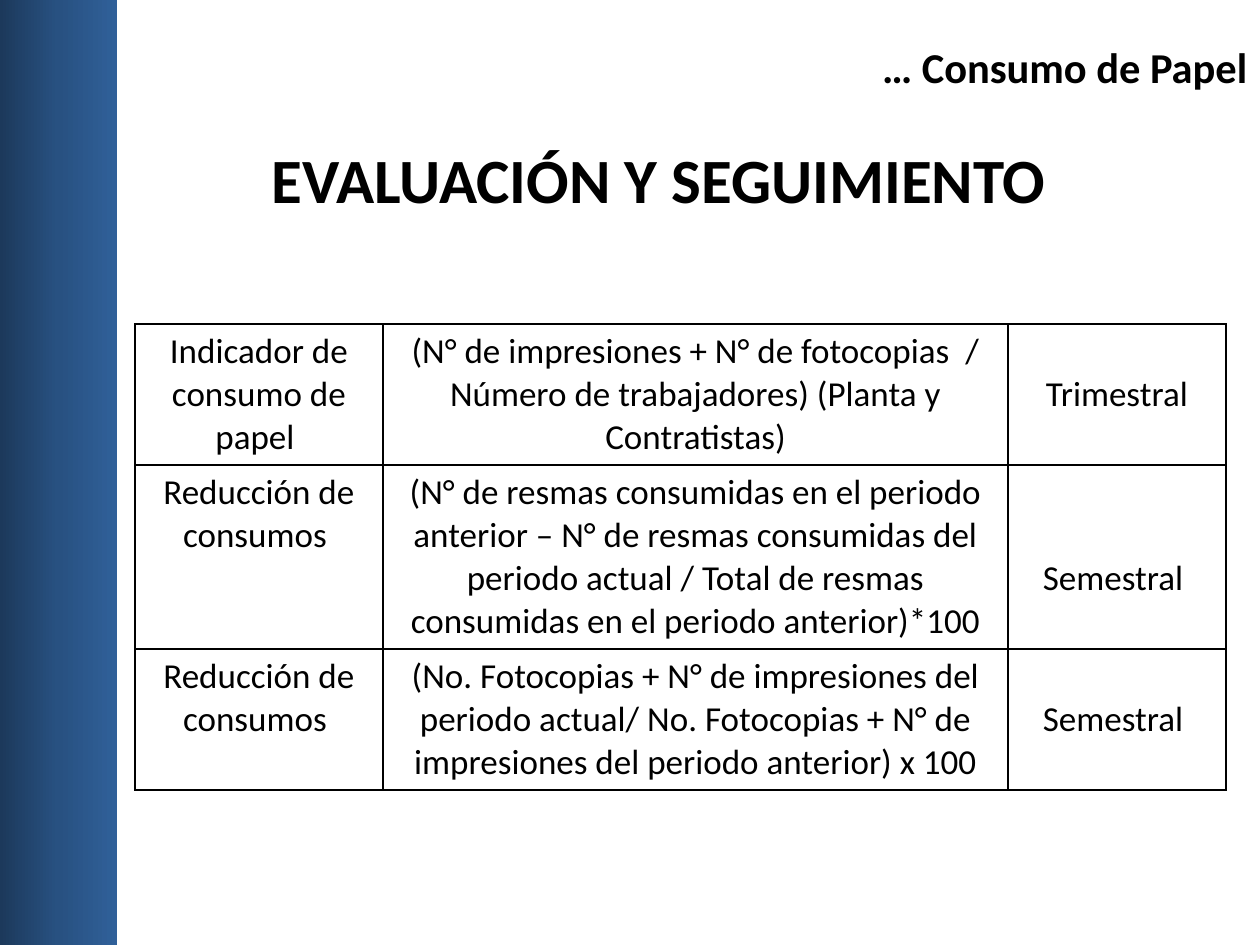
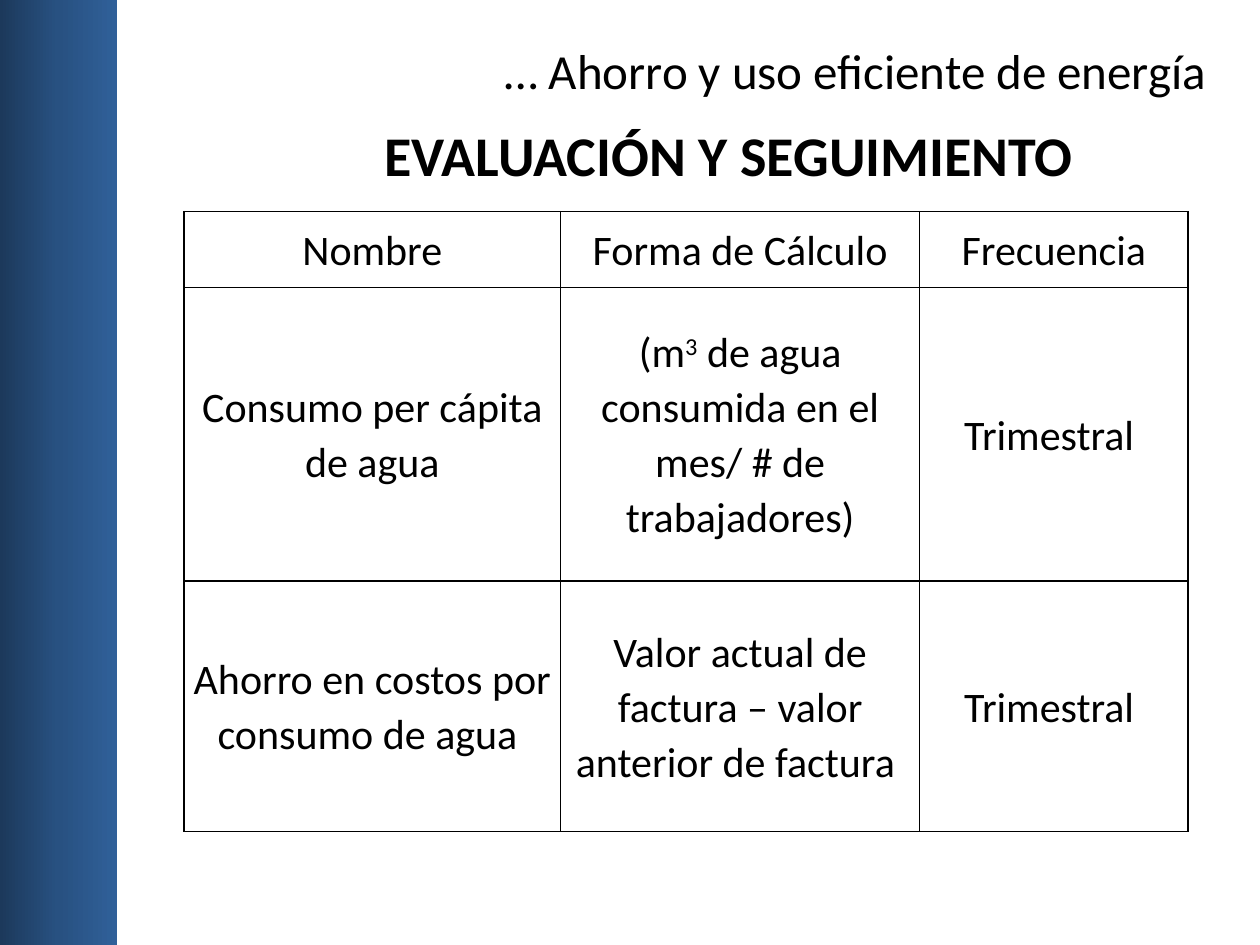
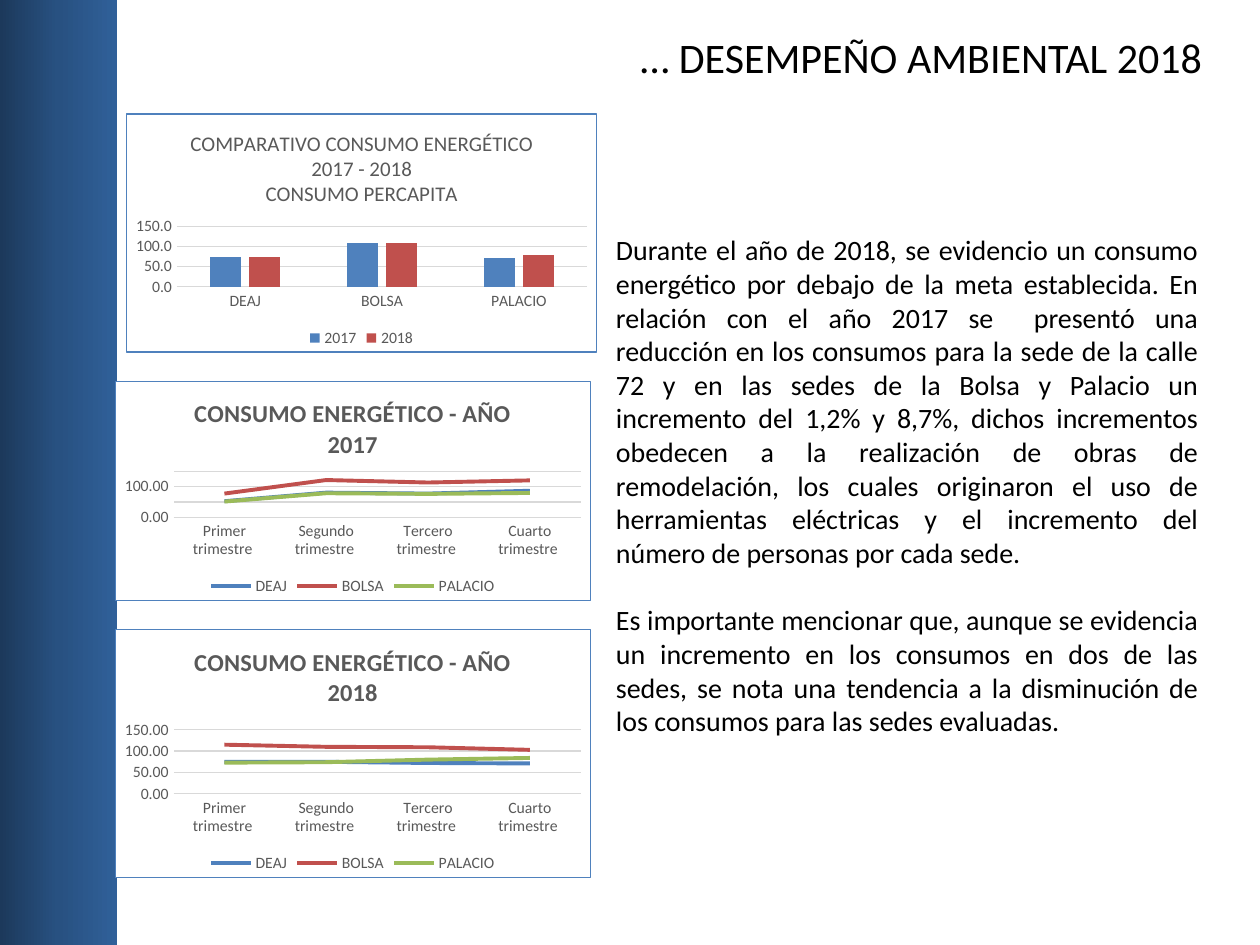
"""Build three slides on paper, water and energy use."""
from lxml.etree import SubElement
from pptx import Presentation
from pptx.chart.data import CategoryChartData
from pptx.dml.color import RGBColor
from pptx.enum.chart import XL_CHART_TYPE, XL_LEGEND_POSITION, XL_TICK_MARK
from pptx.enum.shapes import MSO_SHAPE
from pptx.enum.text import MSO_ANCHOR, PP_ALIGN
from pptx.oxml import parse_xml
from pptx.oxml.ns import nsdecls, qn
from pptx.util import Inches, Pt

FACE = "Calibri"
BLACK, GREY, RULE = "000000", "595959", "D9D9D9"
BLUE, RED, GREEN = HUES = "4F81BD", "C0504D", "9BBB59"
BAND = ("1C395B", "285181", "306099")
WIDE, HIGH = 10, 7.5
LINE = 0.34
HEAD = "EVALUACIÓN Y SEGUIMIENTO"

PAPER = [
    ("Indicador de consumo de papel ",
     "(N° de impresiones + N° de fotocopias  / Número de trabajadores) "
     "(Planta y Contratistas)",
     "Trimestral"),
    ("Reducción de consumos ",
     "(N° de resmas consumidas en el periodo anterior – N° de resmas "
     "consumidas del periodo actual / Total de resmas consumidas en el "
     "periodo anterior)*100",
     "Semestral "),
    ("Reducción de consumos ",
     "(No. Fotocopias + N° de impresiones del periodo actual/ "
     "No. Fotocopias + N° de impresiones del periodo anterior) x 100",
     "Semestral "),
]
DROPS = (1, 2, 1)

WATER = [
    ("Nombre", "Forma de Cálculo", "Frecuencia"),
    ("Consumo per cápita de agua",
     "(m^3^ de agua consumida en el mes/ # de trabajadores)",
     "Trimestral "),
    ("Ahorro en costos por consumo de agua ",
     "Valor actual de factura – valor anterior de factura ",
     "Trimestral "),
]

SITES = ("DEAJ", "BOLSA", "PALACIO")
TERMS = [f"{term} trimestre " for term in
         ("Primer", "Segundo", "Tercero", "Cuarto")]
BARS, LINES = XL_CHART_TYPE.COLUMN_CLUSTERED, XL_CHART_TYPE.LINE
CHARTS = [
    dict(kind=BARS, box=(1, 0.9, 3.74, 1.9), size=12, form="0.0",
         title=("COMPARATIVO CONSUMO ENERGÉTICO 2017 - 2018",
                "CONSUMO PERCAPITA"),
         cats=SITES, rows={"2017": (74, 108, 71), "2018": (73, 109, 78)}),
    dict(kind=LINES, box=(0.91, 4.99, 3.78, 1.98), size=14, form="0.00",
         title=("CONSUMO ENERGÉTICO - AÑO 2018",), cats=TERMS,
         rows=dict(zip(SITES, ((75, 75, 72, 71), (115, 110, 109, 103),
                               (73, 74, 80, 84))))),
    dict(kind=LINES, box=(0.91, 3.02, 3.78, 1.75), size=14, form="0.00",
         title=("CONSUMO ENERGÉTICO - AÑO 2017",), cats=TERMS,
         rows=dict(zip(SITES, ((52, 80, 77, 86), (77, 121, 113, 120),
                               (51, 78, 76, 79))))),
]
BODY = (
    "Durante el año de 2018, se evidencio un consumo energético por debajo "
    "de la meta establecida. En relación con el año 2017 se  presentó una "
    "reducción en los consumos para la sede de la calle 72 y en las sedes "
    "de la Bolsa y Palacio un incremento del 1,2% y 8,7%, dichos incrementos "
    "obedecen a la realización de obras de remodelación, los cuales "
    "originaron el uso de herramientas eléctricas y el incremento del número "
    "de personas por cada sede. ",
    "Es importante mencionar que, aunque se evidencia un incremento en los "
    "consumos en dos de las sedes, se nota una tendencia a la disminución de "
    "los consumos para las sedes evaluadas.",
)


def hue(code):
    return RGBColor.from_string(code)


def style(font, size, code=BLACK, bold=False):
    font.name, font.size, font.bold = FACE, Pt(size), bold
    font.color.rgb = hue(code)


def fill_text(frame, paras, size, align, bold=False, gap=0):
    frame.word_wrap = True
    frame.text = "\n".join(paras)
    for num, para in enumerate(frame.paragraphs):
        para.alignment = align
        if num:
            para.space_before = Pt(gap)
        for run in para.runs:
            style(run.font, size, bold=bold)


def add_text(slide, box, *args, **more):
    shape = slide.shapes.add_textbox(*map(Inches, box))
    fill_text(shape.text_frame, *args, **more)


def add_slide(deck, title, box, size, bold=False):
    slide = deck.slides.add_slide(deck.slide_layouts[5])
    shape = slide.shapes.title
    shape.left, shape.top, shape.width, shape.height = map(Inches, box)
    fill_text(shape.text_frame, [title], size, PP_ALIGN.RIGHT, bold)
    shape.text_frame.vertical_anchor = MSO_ANCHOR.MIDDLE
    return slide


def add_band(deck, slide):
    band = slide.shapes.add_shape(MSO_SHAPE.RECTANGLE, 0, 0,
                                  Inches(0.93), Inches(HIGH))
    band.shadow.inherit = False
    band.line.fill.background()
    grad = "".join(f'<a:gs pos="{num * 50000}"><a:srgbClr val="{code}"/></a:gs>'
                   for num, code in enumerate(BAND))
    band._element.spPr.find(qn("a:prstGeom")).addnext(parse_xml(
        f'<a:gradFill {nsdecls("a")}><a:gsLst>{grad}</a:gsLst>'
        '<a:lin ang="0" scaled="0"/></a:gradFill>'))
    deck.slide_layouts[5].shapes._spTree.insert(2, band._element)


def add_edges(cell):
    props = cell._tc.get_or_add_tcPr()
    for side in ("lnL", "lnR", "lnT", "lnB"):
        edge = SubElement(props, qn(f"a:{side}"), w="12700")
        ink = SubElement(edge, qn("a:solidFill"))
        SubElement(ink, qn("a:srgbClr"), val=BLACK)
    cell.fill.background()


def add_grid(slide, spot, cols, tall, rows, size):
    table = slide.shapes.add_table(
        len(rows), len(cols), *map(Inches, (*spot, sum(cols), sum(tall)))).table
    table.first_row = table.horz_banding = False
    for col, width in zip(table.columns, cols):
        col.width = Inches(width)
    for row, height, texts in zip(table.rows, tall, rows):
        row.height = Inches(height)
        for cell, text in zip(row.cells, texts):
            add_edges(cell)
            para = cell.text_frame.paragraphs[0]
            para.alignment = PP_ALIGN.CENTER
            for num, part in enumerate(text.split("^")):
                run = para.add_run()
                run.text = part
                style(run.font, size)
                if num % 2:
                    run._r.get_or_add_rPr().set("baseline", "30000")
    return table


def add_graph(slide, kind, box, title, size, form, cats, rows):
    data = CategoryChartData()
    data.categories = cats
    for name, vals in rows.items():
        data.add_series(name, vals)
    chart = slide.shapes.add_chart(kind, *map(Inches, box), data).chart
    style(chart.font, 10)
    chart._chartSpace.find(qn("c:chart")).addnext(parse_xml(
        f'<c:spPr {nsdecls("c", "a")}><a:solidFill><a:srgbClr val="FFFFFF"/>'
        f'</a:solidFill><a:ln w="9525"><a:solidFill><a:srgbClr val="{BLUE}"/>'
        '</a:solidFill></a:ln></c:spPr>'))
    chart.has_title = True
    chart.chart_title.include_in_layout = False
    frame = chart.chart_title.text_frame
    frame.text = "\n".join(title)
    for para in frame.paragraphs:
        for run in para.runs:
            style(run.font, size, GREY, kind == LINES)
    chart.has_legend = True
    chart.legend.position = XL_LEGEND_POSITION.BOTTOM
    chart.legend.include_in_layout = False
    style(chart.legend.font, 9, GREY)
    base, side = chart.category_axis, chart.value_axis
    for axis in (base, side):
        axis.major_tick_mark = axis.minor_tick_mark = XL_TICK_MARK.NONE
        style(axis.tick_labels.font, 9, GREY)
    side.minimum_scale, side.maximum_scale, side.major_unit = 0, 150, 50
    side.tick_labels.number_format = form
    side.tick_labels.number_format_is_linked = False
    side.format.line.fill.background()
    for line in (base.format.line, side.major_gridlines.format.line):
        line.color.rgb, line.width = hue(RULE), Pt(0.75)
    plot = chart.plots[0]
    plot.vary_by_categories = False
    if kind == BARS:
        plot.gap_width, plot.overlap = 219, -27
    for line, code in zip(plot.series, HUES):
        if kind == BARS:
            line.format.fill.solid()
            line.format.fill.fore_color.rgb = hue(code)
        else:
            line.smooth = False
            line.format.line.color.rgb = hue(code)
            line.format.line.width = Pt(2.25)


def main():
    deck = Presentation()
    deck.slide_width, deck.slide_height = Inches(WIDE), Inches(HIGH)

    slide = add_slide(deck, "… Consumo de Papel",
                      (1.38, 0.26, 8.62, 0.53), 24.3, True)
    add_band(deck, slide)
    add_text(slide, (0.73, 1.07, 9, 0.77), [HEAD], 36, PP_ALIGN.CENTER, True)
    table = add_grid(slide, (1.07, 2.57), (1.97, 4.96, 1.73),
                     (1.12, 1.46, 1.12), PAPER, 20)
    for row, drop in zip(table.rows, DROPS):
        row.cells[2].margin_top = Inches(0.05 + drop * LINE)

    slide = add_slide(deck, "… Ahorro y uso eficiente de energía ",
                      (0.76, 0.21, 9, 0.69), 28)
    add_text(slide, (1.81, 0.91, 7.95, 0.77), [HEAD], 32, PP_ALIGN.CENTER, True)
    table = add_grid(slide, (1.46, 1.68), (2.99, 2.85, 2.13),
                     (0.6, 2.33, 1.99), WATER, 24)
    for cell in table.iter_cells():
        cell.vertical_anchor = MSO_ANCHOR.MIDDLE
        cell.margin_left = cell.margin_right = Inches(0.07)
        cell.margin_top = cell.margin_bottom = 0
        cell.text_frame.paragraphs[0].line_spacing = 1.07

    slide = add_slide(deck, "… DESEMPEÑO AMBIENTAL 2018",
                      (0.64, 0.21, 9, 0.48), 24)
    for chart in CHARTS:
        add_graph(slide, **chart)
    add_text(slide, (4.79, 1.8, 4.82, 4.41), BODY, 16, PP_ALIGN.JUSTIFY,
             gap=19.5)
    deck.save("out.pptx")


if __name__ == "__main__":
    main()
